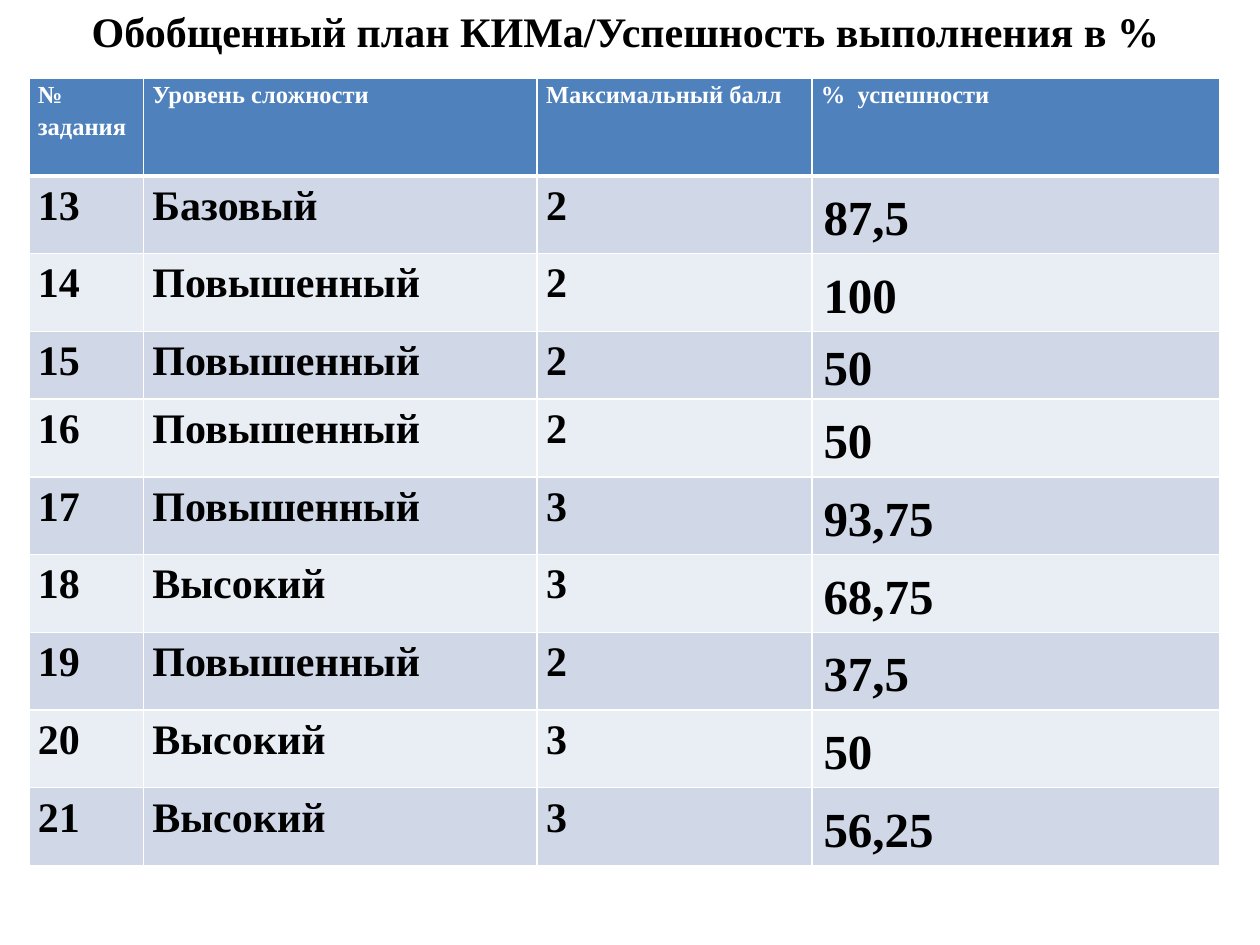
import lxml.etree
import pptx
import pptx.dml.color
import pptx.enum.text
import pptx.oxml.ns
import pptx.util

COLORS = {
    "header": "4F81BD",
    "odd_row": "D0D8E8",
    "even_row": "E9EDF4",
    "white": "FFFFFF",
    "black": "000000",
}
FONT = "Times New Roman"
SLIDE_WIDTH, SLIDE_HEIGHT = 10, 7.5
COLUMN_WIDTHS = [0.91, 3.12, 2.18, 3.23]
HEADER_HEIGHT, ROW_HEIGHT, SHORT_ROW_HEIGHT = 0.78, 0.62, 0.54
SHORT_ROW = 3

TITLE = "Обобщенный план КИМа/Успешность выполнения в %"
HEADERS = ["№ задания", "Уровень сложности", "Максимальный балл", "%  успешности"]
TASKS = [
    ("13", "Базовый", "2", "87,5"),
    ("14", "Повышенный", "2", "100"),
    ("15", "Повышенный", "2", "50"),
    ("16", "Повышенный", "2", "50"),
    ("17", "Повышенный", "3", "93,75"),
    ("18", "Высокий", "3", "68,75"),
    ("19", "Повышенный", "2", "37,5"),
    ("20", "Высокий", "3", "50"),
    ("21", "Высокий", "3", "56,25"),
]


def rgb(name):
    return pptx.dml.color.RGBColor.from_string(COLORS[name])


def add_run(paragraph, text, size, color):
    run = paragraph.add_run()
    run.text = text
    run.font.name = FONT
    run.font.size = pptx.util.Pt(size)
    run.font.bold = True
    run.font.color.rgb = rgb(color)


def set_borders(cell, top, bottom):
    """Draw white cell borders; widths are in points, the sides are 1 point."""
    properties = cell._tc.get_or_add_tcPr()
    for side, width in (("L", 1), ("R", 1), ("T", top), ("B", bottom)):
        line = lxml.etree.SubElement(properties, pptx.oxml.ns.qn(f"a:ln{side}"))
        line.set("w", str(pptx.util.Pt(width)))
        fill = lxml.etree.SubElement(line, pptx.oxml.ns.qn("a:solidFill"))
        color = lxml.etree.SubElement(fill, pptx.oxml.ns.qn("a:srgbClr"))
        color.set("val", COLORS["white"])


def fill_cell(cell, text, row, is_result):
    """Format one cell; results below the header are larger and centred vertically."""
    set_borders(cell, top=3 if row == 1 else 1, bottom=3 if row == 0 else 1)
    cell.fill.solid()
    cell.fill.fore_color.rgb = rgb(
        "header" if row == 0 else "odd_row" if row % 2 else "even_row")
    cell.margin_top = cell.margin_bottom = 0
    cell.margin_left = cell.margin_right = pptx.util.Inches(0.04 if is_result else 0.07)
    paragraph = cell.text_frame.paragraphs[0]
    paragraph.line_spacing = 1.15
    if is_result:
        cell.vertical_anchor = pptx.enum.text.MSO_ANCHOR.MIDDLE
        paragraph._p.get_or_add_pPr().set("indent", str(pptx.util.Inches(0.05)))
    else:
        paragraph.alignment = pptx.enum.text.PP_ALIGN.JUSTIFY
    size = 14 if row == 0 else 28 if is_result else 24
    add_run(paragraph, text, size, "white" if row == 0 else "black")


def place_title(slide, box):
    title = slide.shapes.title
    title.left, title.top, title.width, title.height = map(pptx.util.Inches, box)
    frame = title.text_frame
    frame.word_wrap = True
    frame.vertical_anchor = pptx.enum.text.MSO_ANCHOR.MIDDLE
    frame.margin_top = frame.margin_bottom = 0
    paragraph = frame.paragraphs[0]
    paragraph.alignment = pptx.enum.text.PP_ALIGN.CENTER
    add_run(paragraph, TITLE, 24, "black")


def place_results_table(slide, box):
    rows = [HEADERS, *TASKS]
    left, top, width, height = map(pptx.util.Inches, box)
    table = slide.shapes.add_table(
        len(rows), len(HEADERS), left, top, width, height).table
    table.horz_banding = False
    for column, share in zip(table.columns, COLUMN_WIDTHS):
        column.width = int(width * share / sum(COLUMN_WIDTHS))

    row_heights = [HEADER_HEIGHT] + [ROW_HEIGHT] * len(TASKS)
    row_heights[SHORT_ROW] = SHORT_ROW_HEIGHT
    for row, texts in enumerate(rows):
        table.rows[row].height = int(height * row_heights[row] / sum(row_heights))
        for column, text in enumerate(texts):
            is_result = row > 0 and column == len(HEADERS) - 1
            fill_cell(table.cell(row, column), text, row, is_result)


def main():
    presentation = pptx.Presentation()
    presentation.slide_width = pptx.util.Inches(SLIDE_WIDTH)
    presentation.slide_height = pptx.util.Inches(SLIDE_HEIGHT)
    slide = presentation.slides.add_slide(presentation.slide_layouts[5])
    place_title(slide, (0.31, 0.05, 9.31, 0.39))
    place_results_table(slide, (0.23, 0.62, 9.45, 6.25))
    presentation.save("out.pptx")


if __name__ == "__main__":
    main()
